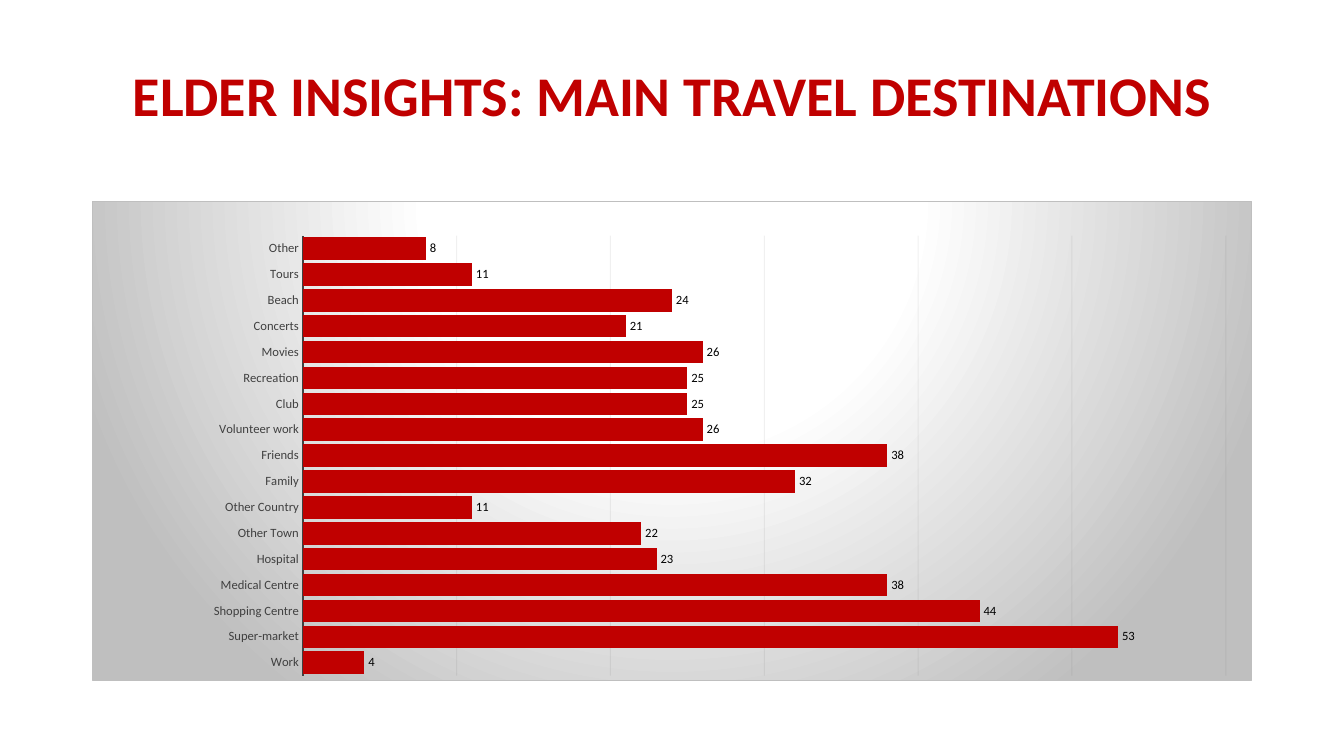
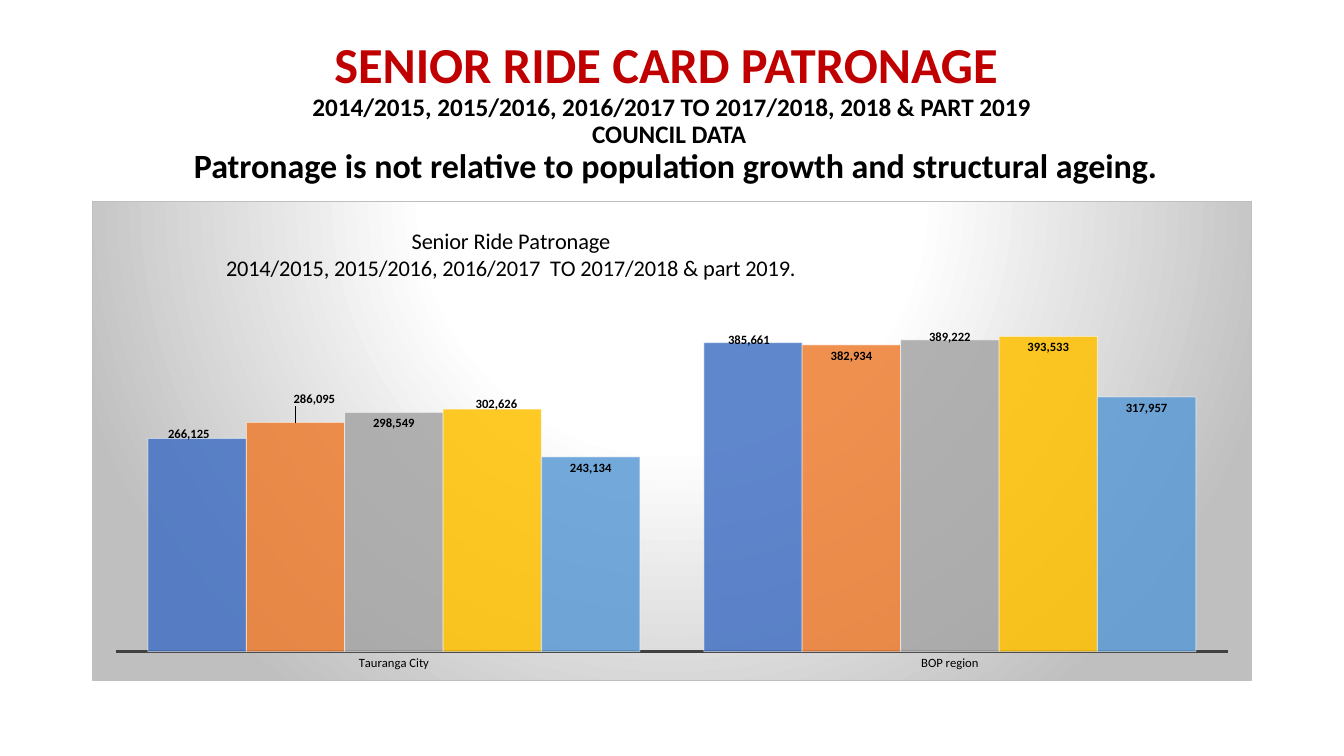
from lxml import etree
from pptx import Presentation
from pptx import util as u
from pptx.chart.data import CategoryChartData
from pptx.dml.color import RGBColor
from pptx.enum import chart as ch, text
from pptx.oxml import parse_xml
from pptx.oxml.ns import nsdecls, qn

PX = 9525
FONT = "Calibri"
C = {"red": "C00000", "black": "000000", "dark": "404040", "grid": "0D0D0D",
     "white": "FFFFFF", "edge": "BFBFBF"}
SLIDE = (1280, 720)
LEFT, TITLE_TOP, WIDTH = 88, 38, 1104
CHART_TOP, CHART_H = 191, 458

# Title lines: text, size, colour
DESTINATIONS_TITLE = [("ELDER INSIGHTS: MAIN TRAVEL DESTINATIONS", 40, "red")]
PATRONAGE_TITLE = [
    ("SENIOR RIDE CARD PATRONAGE ", 36, "red"),
    ("2014/2015, 2015/2016, 2016/2017 TO 2017/2018, 2018 & PART 2019", 18, "black"),
    ("COUNCIL DATA ", 18, "black"),
    (" Patronage is not relative to population growth and structural ageing.", 24.3, "black"),
]

DESTINATIONS = {
    "Work": 4, "Super-market": 53, "Shopping Centre": 44, "Medical Centre": 38,
    "Hospital": 23, "Other Town": 22, "Other Country": 11, "Family": 32,
    "Friends": 38, "Volunteer work": 26, "Club": 25, "Recreation": 25,
    "Movies": 26, "Concerts": 21, "Beach": 24, "Tours": 11, "Other": 8,
}
REGIONS = ["Tauranga City", "BOP region"]
PATRONAGE_HEAD = ["Senior Ride Patronage",
                  "2014/2015, 2015/2016, 2016/2017  TO 2017/2018 & part 2019."]
# Values by region, colour, and label shifts in px by point
PATRONAGE = [
    ((266125, 385661), "4472C4", {0: (-8, -15), 1: (-4, -13)}),
    ((286095, 382934), "ED7D31", {0: (18, -33)}),
    ((298549, 389222), "A5A5A5", {1: (0, -13)}),
    ((302626, 393533), "FFC000", {0: (4, -15)}),
    ((243134, 317957), "5B9BD5", {}),
]


def rgb(name):
    return RGBColor.from_string(C.get(name, name))


def set_font(font, size, color="black", bold=False):
    font.name, font.size, font.bold = FONT, u.Pt(size), bold
    font.color.rgb = rgb(color)


def set_line(line, color, width):
    line.color.rgb = rgb(color)
    line.width = u.Pt(width)


def set_alpha(el, *percents):
    """Give the colours inside el their opacity, in document order."""
    for clr, pct in zip(el.iter(qn("a:srgbClr")), percents):
        etree.SubElement(clr, qn("a:alpha"), val=str(pct * 1000))


def layout_xml(x, y, w=None, h=None):
    """Manual chart layout from px; with a size it is the inner plot area."""
    parts = [("layoutTarget", "inner")] if w else []
    if w:
        parts += [("xMode", "edge"), ("yMode", "edge")]
    parts += [("x", round(x / WIDTH, 4)), ("y", round(y / CHART_H, 4))]
    if w:
        parts += [("w", round(w / WIDTH, 4)), ("h", round(h / CHART_H, 4))]
    inner = "".join(f'<c:{k} val="{v}"/>' for k, v in parts)
    return parse_xml(f'<c:layout {nsdecls("c")}><c:manualLayout>{inner}'
                     '</c:manualLayout></c:layout>')


def drop_layout(el):
    for old in el.findall(qn("c:layout")):
        el.remove(old)


def add_title(s, lines, height):
    box = s.shapes.add_textbox(*(v * PX for v in (LEFT, TITLE_TOP, WIDTH, height)))
    tf = box.text_frame
    tf.word_wrap = True
    tf.vertical_anchor = text.MSO_ANCHOR.MIDDLE
    p = tf.paragraphs[0]
    p.alignment, p.line_spacing = text.PP_ALIGN.CENTER, 0.9
    for i, (line, size, color) in enumerate(lines):
        if i:
            p.add_line_break()
        r = p.add_run()
        r.text = line
        set_font(r.font, size, color, bold=True)


def add_backdrop(chart):
    """Radial grey gradient and thin border behind the whole chart."""
    stops = "".join(f'<a:gs pos="{pos}000"><a:srgbClr val="{C[c]}"/></a:gs>'
                    for pos, c in ((0, "white"), (39, "white"), (100, "edge")))
    chart._chartSpace.find(qn("c:chart")).addnext(parse_xml(
        f'<c:spPr {nsdecls("c", "a")}><a:gradFill><a:gsLst>{stops}</a:gsLst>'
        '<a:path path="circle"><a:fillToRect l="50000" t="-80000" r="50000" b="180000"/>'
        '</a:path></a:gradFill><a:ln w="9525"><a:solidFill>'
        f'<a:srgbClr val="{C["edge"]}"/></a:solidFill></a:ln></c:spPr>'))


def add_bars(s, kind, cats, series, fmt, gap, maximum, plot_box, axis_color):
    data = CategoryChartData(number_format=fmt)
    data.categories = cats
    for i, vals in enumerate(series, 1):
        data.add_series(f"Series {i}", vals)
    frame = s.shapes.add_chart(
        kind, *(v * PX for v in (LEFT, CHART_TOP, WIDTH, CHART_H)), data)
    chart = frame.chart
    set_font(chart.font, 10)
    chart.has_legend = chart.has_title = False
    add_backdrop(chart)

    cat, val = chart.category_axis, chart.value_axis
    cat.major_tick_mark = ch.XL_TICK_MARK.NONE
    set_font(cat.tick_labels.font, 9, axis_color)
    set_line(cat.format.line, "dark", 1.5)
    val.visible = val.has_major_gridlines = False
    val.minimum_scale, val.maximum_scale = 0, maximum

    plot = chart.plots[0]
    plot.gap_width, plot.vary_by_categories = gap, False
    area = chart._chartSpace.find(f'{qn("c:chart")}/{qn("c:plotArea")}')
    drop_layout(area)
    area.insert(0, layout_xml(*plot_box))
    return chart


def format_labels(labels, fmt, position, bold=False):
    labels.show_value = True
    labels.number_format, labels.number_format_is_linked = fmt, False
    labels.position = position
    set_font(labels.font, 9, bold=bold)


def hide_leader_lines(labels):
    labels._element.append(parse_xml(
        f'<c:extLst {nsdecls("c")}><c:ext uri="{{CE6537A1-D6FC-4f65-9D91-7224C49458BB}}"'
        ' xmlns:c15="http://schemas.microsoft.com/office/drawing/2012/chart">'
        '<c15:showLeaderLines val="0"/></c:ext></c:extLst>'))


def shift_label(point, dx, dy):
    label = point.data_label
    set_font(label.font, 9, bold=True)
    label.position = ch.XL_LABEL_POSITION.INSIDE_END
    dlbl = label._get_or_add_dLbl()
    drop_layout(dlbl)
    dlbl.find(qn("c:idx")).addnext(layout_xml(dx, dy))


def add_heading(chart, lines, x, y):
    chart.has_title = True
    tf = chart.chart_title.text_frame
    for i, line in enumerate(lines):
        p = tf.add_paragraph() if i else tf.paragraphs[0]
        p.alignment = text.PP_ALIGN.CENTER
        r = p.add_run()
        r.text = line
        set_font(r.font, 16)
    title = chart.chart_title._element
    drop_layout(title)
    layout = layout_xml(x, y)
    for mode in ("c:yMode", "c:xMode"):
        el = etree.Element(qn(mode), val="edge")
        layout[0].insert(0, el)
    title.find(qn("c:tx")).addnext(layout)


def destinations_slide(s):
    add_title(s, DESTINATIONS_TITLE, 111)
    chart = add_bars(s, ch.XL_CHART_TYPE.BAR_CLUSTERED, list(DESTINATIONS),
                     [list(DESTINATIONS.values())], "General", 15, 60,
                     (200, 33, 880, 420), "dark")
    val = chart.value_axis
    val.has_major_gridlines, val.major_unit = True, 10
    set_line(val.major_gridlines.format.line, "grid", 0.75)
    set_alpha(val._element.find(qn("c:majorGridlines")), 5)
    ser = chart.plots[0].series[0]
    ser.format.fill.solid()
    ser.format.fill.fore_color.rgb = rgb("red")
    format_labels(ser.data_labels, "General", ch.XL_LABEL_POSITION.OUTSIDE_END)


def patronage_slide(s):
    add_title(s, PATRONAGE_TITLE, 139)
    chart = add_bars(s, ch.XL_CHART_TYPE.COLUMN_CLUSTERED, REGIONS,
                     [vals for vals, _, _ in PATRONAGE], "#,##0", 65, 450000,
                     (22, 86, 1060, 344), "black")
    add_heading(chart, PATRONAGE_HEAD, 124, 21)
    for ser, (_, color, shifts) in zip(chart.plots[0].series, PATRONAGE):
        ser.format.fill.solid()
        ser.format.fill.fore_color.rgb = rgb(color)
        set_line(ser.format.line, "white", 0.75)
        set_alpha(ser._element.find(qn("c:spPr")), 85, 50)
        labels = ser.data_labels
        format_labels(labels, "#,##0", ch.XL_LABEL_POSITION.INSIDE_END, bold=True)
        for i, (dx, dy) in shifts.items():
            shift_label(ser.points[i], dx, dy)
        hide_leader_lines(labels)


def main():
    prs = Presentation()
    prs.slide_width, prs.slide_height = (v * PX for v in SLIDE)
    for build in (destinations_slide, patronage_slide):
        build(prs.slides.add_slide(prs.slide_layouts[6]))
    prs.save("out.pptx")


if __name__ == "__main__":
    main()
